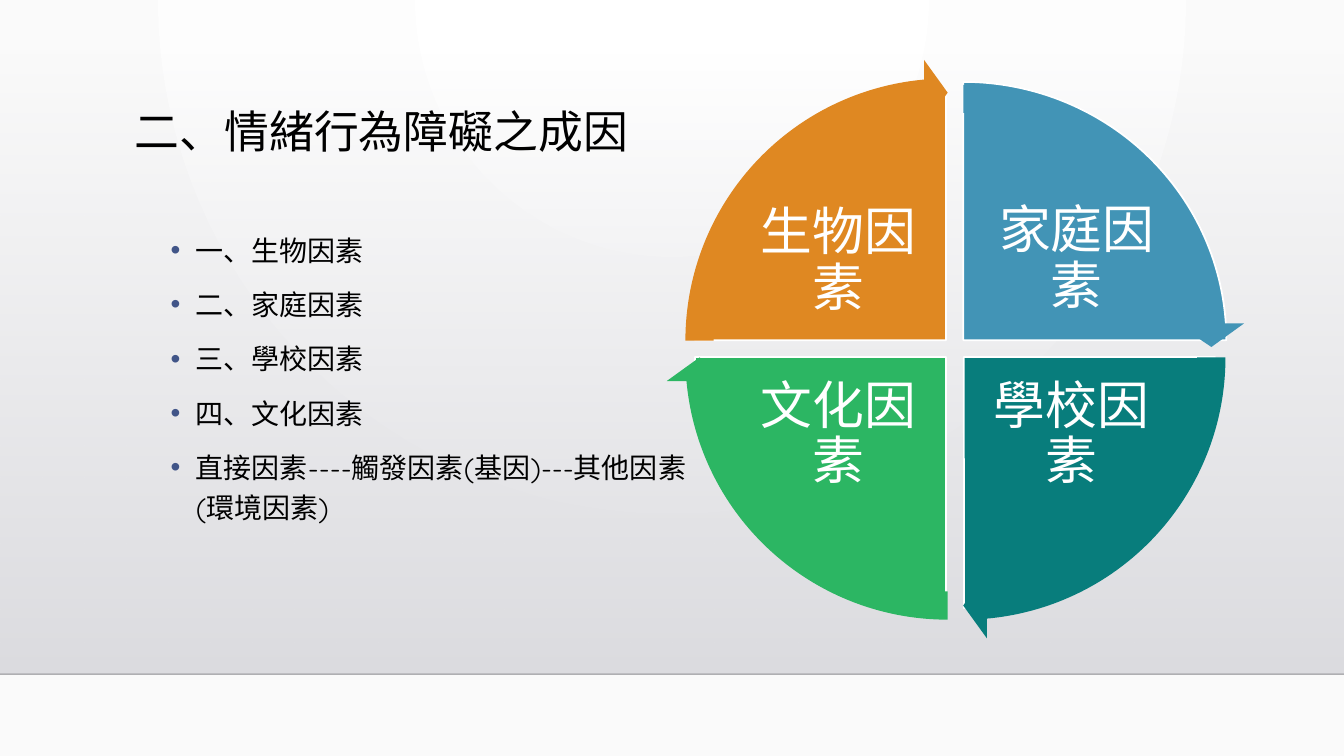
from lxml.etree import SubElement
from pptx import Presentation
from pptx.dml.color import RGBColor
from pptx.enum.shapes import MSO_CONNECTOR, MSO_SHAPE
from pptx.enum.text import MSO_ANCHOR, PP_ALIGN
from pptx.oxml import parse_xml
from pptx.oxml.ns import nsdecls, qn
from pptx.util import Pt

PX = 9525
FONT = "Quicksand"
BLACK = RGBColor(0x00, 0x00, 0x00)
WHITE = RGBColor(0xFF, 0xFF, 0xFF)
BULLET = RGBColor(0x41, 0x55, 0x88)
RULE = RGBColor(0x00, 0x00, 0x01)
BLUE = RGBColor(0x42, 0x94, 0xB6)
TEAL = RGBColor(0x08, 0x7D, 0x7C)
GREEN = RGBColor(0x2C, 0xB6, 0x63)
ORANGE = RGBColor(0xDF, 0x88, 0x22)
PAGE_INNER, PAGE_OUTER = WHITE, RGBColor(0xFA, 0xFA, 0xFA)
PANEL_TOP = RGBColor(0xDC, 0xDC, 0xE0)
PANEL_BOTTOM = RGBColor(0xDE, 0xDE, 0xE2)


def set_gradient(props, first, last, alpha, direction):
    grad = parse_xml(
        f'<a:gradFill {nsdecls("a")} rotWithShape="1"><a:gsLst>'
        f'<a:gs pos="0"><a:srgbClr val="{first}"><a:alpha val="{alpha}"/></a:srgbClr></a:gs>'
        f'<a:gs pos="100000"><a:srgbClr val="{last}"/></a:gs>'
        f'</a:gsLst>{direction}</a:gradFill>')
    props.replace(props.find(qn("a:solidFill")), grad)


def add_text(s, box, lines, size, color, spacing):
    tf = s.shapes.add_textbox(*[v * PX for v in box]).text_frame
    tf.word_wrap = True
    tf.text = "\n".join(lines)
    for p in tf.paragraphs:
        p.line_spacing = spacing
        for r in p.runs:
            r.font.size = Pt(size)
            r.font.name = FONT
            r.font.color.rgb = color
    return tf


prs = Presentation()
prs.slide_width, prs.slide_height = 1280 * PX, 720 * PX
s = prs.slides.add_slide(prs.slide_layouts[6])

s.background.fill.solid()
set_gradient(s.element.cSld.find(qn("p:bg")).find(qn("p:bgPr")), PAGE_INNER, PAGE_OUTER, 100000,
             '<a:path path="circle"><a:fillToRect l="43000" r="43000" b="100000"/></a:path>')

panel = s.shapes.add_shape(MSO_SHAPE.RECTANGLE, 0, 49 * PX, 1280 * PX, 593 * PX)
panel.shadow.inherit = False
panel.line.fill.background()
panel.fill.solid()
set_gradient(panel.element.spPr, PANEL_TOP, PANEL_BOTTOM, 0, '<a:lin ang="5400000" scaled="0"/>')

rule = s.shapes.add_connector(MSO_CONNECTOR.STRAIGHT, 0, 642 * PX, 1280 * PX, 642 * PX)
rule.line.width = Pt(1)
rule.line.color.rgb = RULE
SubElement(rule.element.spPr.find(".//" + qn("a:srgbClr")), qn("a:alpha"), val="20000")
SubElement(rule.element.spPr, qn("a:effectLst"))

add_text(s, (119, 100, 1008, 110), ["二、情緒行為障礙之成因"], 32, BLACK, 0.9)

causes = ["一、生物因素", "二、家庭因素", "三、學校因素", "四、文化因素",
          "直接因素----觸發因素(基因)---其他因素(環境因素)"]
tf = add_text(s, (153, 211, 544, 362), causes, 20, BLACK, 1.2)
for i, p in enumerate(tf.paragraphs):
    if i:
        p.space_before = Pt(10)
    pPr = p._p.get_or_add_pPr()
    pPr.set("marL", str(24 * PX))
    pPr.set("indent", str(-24 * PX))
    color = SubElement(pPr, qn("a:buClr"))
    SubElement(color, qn("a:srgbClr"), val=str(BULLET))
    SubElement(pPr, qn("a:buFont"), typeface="Arial")
    SubElement(pPr, qn("a:buChar"), char="•")

QUARTER, FULL_TURN = 54, 216
factors = [
    ("家庭因素", BLUE, 162, (667, 78, 501, 492), (933, 180, 185, 135), (649, 62)),
    ("學校因素", TEAL, 0, (679, 101, 478, 478), (932, 349, 177, 131), (649, 72)),
    ("文化因素", GREEN, 54, (662, 101, 478, 478), (710, 349, 177, 131), (634, 72)),
    ("生物因素", ORANGE, 108, (662, 85, 478, 478), (710, 184, 177, 131), (634, 56)),
]

for name, color, start, pie_box, label_box, _ in factors:
    pie = s.shapes.add_shape(MSO_SHAPE.PIE, *[v * PX for v in pie_box])
    pie.shadow.inherit = False
    pie.adjustments[0] = start
    pie.adjustments[1] = (start + QUARTER) % FULL_TURN
    pie.fill.solid()
    pie.fill.fore_color.rgb = color
    pie.line.color.rgb = WHITE
    pie.line.width = Pt(1.25)

    tf = add_text(s, label_box, [name], 37, WHITE, 0.9)
    tf.vertical_anchor = MSO_ANCHOR.MIDDLE
    tf.margin_left = tf.margin_right = tf.margin_top = tf.margin_bottom = 5 * PX
    tf.paragraphs[0].alignment = PP_ALIGN.CENTER

for _, color, start, _, _, (x, y) in factors:
    arrow = s.shapes.add_shape(MSO_SHAPE.CIRCULAR_ARROW, x * PX, y * PX, 537 * PX, 537 * PX)
    arrow.shadow.inherit = False
    for i, value in enumerate((0.05, 3.28, start + 50.73, start, 0.06)):
        arrow.adjustments[i] = value
    arrow.fill.solid()
    arrow.fill.fore_color.rgb = color
    arrow.line.fill.background()

prs.save("out.pptx")
